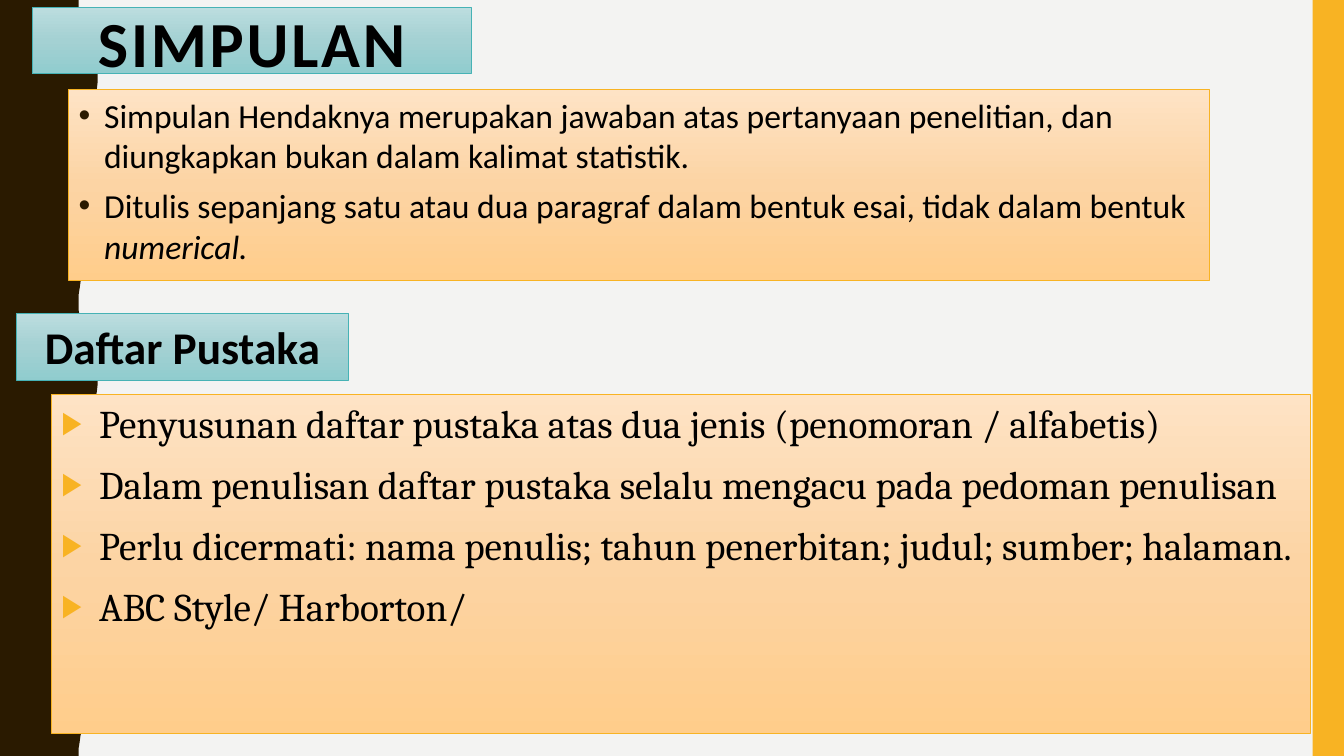
from pptx import Presentation
from pptx.dml.color import RGBColor
from pptx.enum.shapes import MSO_SHAPE
from pptx.enum.text import MSO_ANCHOR, MSO_AUTO_SIZE, PP_ALIGN
from pptx.oxml import parse_xml
from pptx.oxml.ns import nsdecls, qn
from pptx.util import Cm, Pt

RECTANGLE = MSO_SHAPE.RECTANGLE
TOP, MIDDLE = MSO_ANCHOR.TOP, MSO_ANCHOR.MIDDLE
NO_FIT = MSO_AUTO_SIZE.NONE
LEFT, CENTER = PP_ALIGN.LEFT, PP_ALIGN.CENTER

PAPER = RGBColor(0xF3, 0xF3, 0xF2)
BROWN = RGBColor(0x2A, 0x1A, 0x00)
AMBER = RGBColor(0xF8, 0xB3, 0x23)
TEAL = RGBColor(0x46, 0xB2, 0xB5)
BLACK = RGBColor(0x00, 0x00, 0x00)
TEAL_SHADES = [RGBColor(0xBC, 0xDD, 0xDF), RGBColor(0xA4, 0xD1, 0xD3), RGBColor(0x90, 0xCC, 0xCE)]
PEACH_SHADES = [RGBColor(0xFE, 0xE3, 0xC5), RGBColor(0xFC, 0xD4, 0xA4), RGBColor(0xFF, 0xCD, 0x8B)]

SLIDE_WIDTH, SLIDE_HEIGHT = 33.87, 19.05
WAVE_LENGTH, WAVE_COUNT = 3.81, 5
# Half a wave, from trough to crest: x and y in centimetres
HALF_WAVE = [(1.98, 0), (1.98, 0.18), (2.01, 0.36), (2.03, 0.51), (2.06, 0.64),
             (2.11, 0.74), (2.16, 0.84), (2.21, 0.97), (2.26, 1.07), (2.31, 1.17),
             (2.36, 1.27), (2.41, 1.4), (2.44, 1.55), (2.46, 1.73), (2.46, 1.9)]

CONCLUSION_POINTS = [
    [("Simpulan Hendaknya merupakan jawaban atas pertanyaan penelitian, "
      "dan diungkapkan bukan dalam kalimat statistik.", False)],
    [("Ditulis sepanjang satu atau dua paragraf dalam bentuk esai, tidak dalam bentuk ", False),
     ("numerical.", True)],
]
REFERENCE_POINTS = [
    [("Penyusunan daftar pustaka atas dua jenis (penomoran / alfabetis)", False)],
    [("Dalam penulisan daftar pustaka selalu mengacu pada pedoman penulisan", False)],
    [("Perlu dicermati: nama penulis; tahun penerbitan; judul; sumber; halaman.", False)],
    [("ABC Style/ Harborton/", False)],
]


def place(shape, box):
    shape.left, shape.top, shape.width, shape.height = [Cm(length) for length in box]


def add_rectangle(page, box):
    shape = page.shapes.add_shape(RECTANGLE, *[Cm(length) for length in box])
    shape.shadow.inherit = False
    return shape


def paint_flat(shape, color):
    shape.fill.solid()
    shape.fill.fore_color.rgb = color
    shape.line.fill.background()


def paint_gradient(shape, shades, line_color):
    shape.fill.gradient()
    shape.fill.gradient_angle = 270
    stops = shape.element.spPr.find(".//" + qn("a:gsLst"))
    for stop in list(stops):
        stops.remove(stop)
    for index, shade in enumerate(shades):
        stops.append(parse_xml(f'<a:gs {nsdecls("a")} pos="{index * 50000}">'
                               f'<a:srgbClr val="{shade}"/></a:gs>'))
    shape.line.color.rgb = line_color
    shape.line.width = Pt(0.5)


def prepare_frame(shape, anchor):
    frame = shape.text_frame
    frame.word_wrap = True
    frame.auto_size = NO_FIT
    frame.vertical_anchor = anchor
    return frame


def add_span(para, text, font, size):
    span = para.add_run()
    span.text = text
    span.font.name = font
    span.font.size = Pt(size)
    span.font.color.rgb = BLACK
    return span


def set_bullet(para, symbol, color, percent, indent):
    properties = para._p.get_or_add_pPr()
    properties.set("marL", str(Cm(indent)))
    properties.set("indent", str(-Cm(indent)))
    for markup in (f'<a:buClr {nsdecls("a")}><a:srgbClr val="{color}"/></a:buClr>',
                   f'<a:buSzPct {nsdecls("a")} val="{percent * 1000}"/>',
                   f'<a:buFont {nsdecls("a")} typeface="Arial"/>',
                   f'<a:buChar {nsdecls("a")} char="{symbol}"/>'):
        properties.append(parse_xml(markup))


def draw_backdrop(page, width, height):
    """Wavy brown edge on the left, amber bar on the right, behind all else."""
    falling = [(x, WAVE_LENGTH - y) for x, y in reversed(HALF_WAVE[:-1])]
    edge = [(x, y + number * WAVE_LENGTH)
            for number in range(WAVE_COUNT) for x, y in HALF_WAVE + falling]
    points = [(Cm(x), Cm(y)) for x, y in edge + [(0, height)]]
    builder = page.shapes.build_freeform(0, 0)
    builder.add_line_segments(points, close=True)
    wave = builder.convert_to_shape()
    wave.shadow.inherit = False
    paint_flat(wave, BROWN)

    bar_width = 0.79
    bar = add_rectangle(page, (width - bar_width, 0, bar_width, height))
    paint_flat(bar, AMBER)
    for shape in (bar, wave):
        page.shapes.element.insert(2, shape.element)


def fill_heading(shape, box, text, size, anchor):
    place(shape, box)
    paint_gradient(shape, TEAL_SHADES, TEAL)
    para = prepare_frame(shape, anchor).paragraphs[0]
    para.alignment = CENTER
    span = add_span(para, text, "Calibri", size)
    span.font.bold = True
    return para, span


def fill_list(shape, box, points, font, size, gap, bullet):
    place(shape, box)
    paint_gradient(shape, PEACH_SHADES, AMBER)
    frame = prepare_frame(shape, TOP)
    for index, point in enumerate(points):
        para = frame.add_paragraph() if index else frame.paragraphs[0]
        para.alignment = LEFT
        para.space_before = Pt(gap)
        set_bullet(para, *bullet)
        for text, italic in point:
            span = add_span(para, text, font, size)
            if italic:
                span.font.italic = True


def main():
    deck = Presentation()
    deck.slide_width, deck.slide_height = Cm(SLIDE_WIDTH), Cm(SLIDE_HEIGHT)
    page = deck.slides.add_slide(deck.slide_layouts[1])
    page.background.fill.solid()
    page.background.fill.fore_color.rgb = PAPER
    draw_backdrop(page, SLIDE_WIDTH, SLIDE_HEIGHT)

    # Conclusion
    para, span = fill_heading(page.shapes.title, (0.81, 0.18, 11.07, 1.68),
                              "SIMPULAN", 45.9, TOP)
    para.line_spacing = 0.9
    span.font._element.set("spc", "200")
    fill_list(page.placeholders[1], (1.73, 2.26, 28.75, 4.8), CONCLUSION_POINTS,
              "Calibri", 24, 7, ("•", BROWN, 100, 0.64))

    # References
    fill_list(add_rectangle(page, (1.3, 9.93, 31.72, 8.56)), (1.3, 9.93, 31.72, 8.56),
              REFERENCE_POINTS, "Cambria", 28, 10, ("▶", AMBER, 80, 0.95))
    heading_box = (0.41, 7.9, 8.38, 1.68)
    fill_heading(add_rectangle(page, heading_box), heading_box, "Daftar Pustaka", 32.4, MIDDLE)

    deck.save("out.pptx")


if __name__ == "__main__":
    main()
